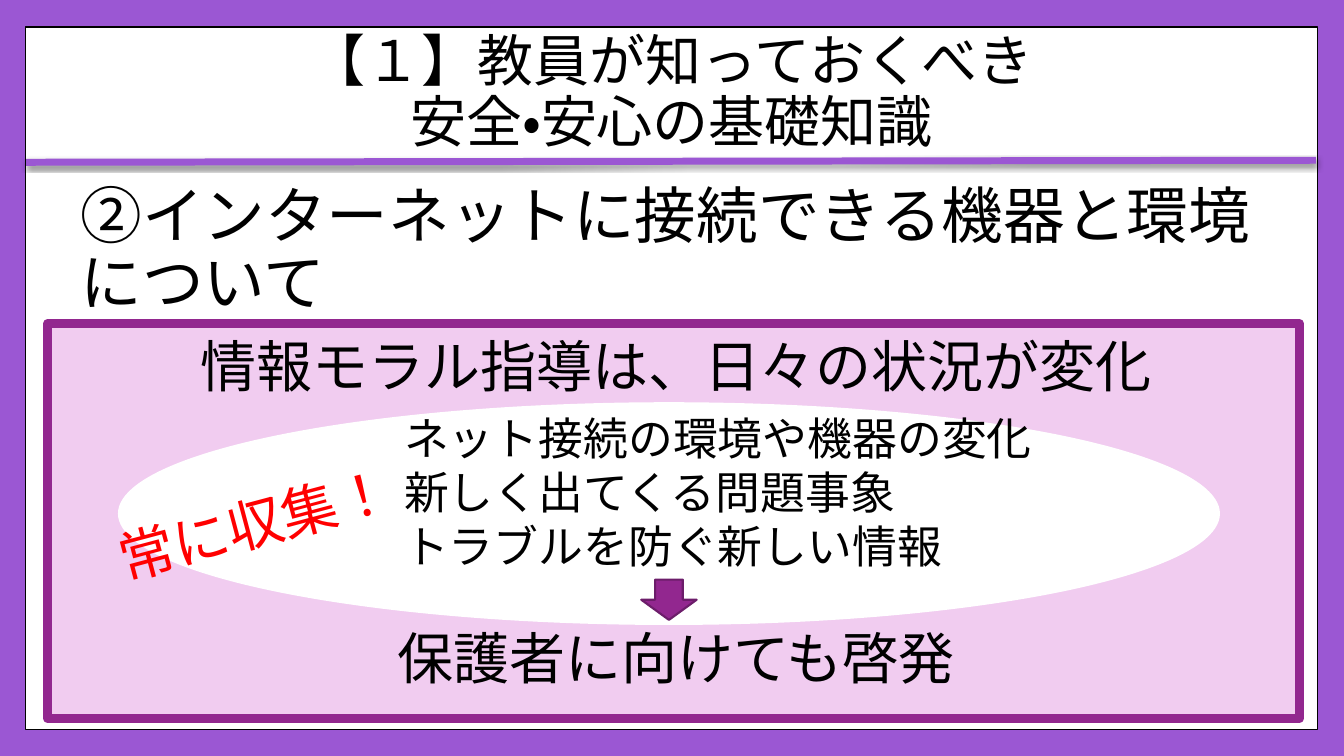
from lxml import etree
from pptx import Presentation
from pptx.dml.color import RGBColor
from pptx.enum.lang import MSO_LANGUAGE_ID
from pptx.enum.shapes import MSO_CONNECTOR, MSO_SHAPE
from pptx.enum.text import MSO_ANCHOR, MSO_AUTO_SIZE, PP_ALIGN
from pptx.oxml.ns import qn
from pptx.util import Inches, Pt

LEFT, CENTER = PP_ALIGN.LEFT, PP_ALIGN.CENTER
TOP, MIDDLE = MSO_ANCHOR.TOP, MSO_ANCHOR.MIDDLE
JAPANESE = MSO_LANGUAGE_ID.JAPANESE

VIOLET = RGBColor(0x9B, 0x57, 0xD3)
PLUM = RGBColor(0x92, 0x27, 0x8F)
DARK_PLUM = RGBColor(0x6C, 0x1D, 0x6A)
PINK = RGBColor(0xF1, 0xCC, 0xF0)
WHITE = RGBColor(0xFF, 0xFF, 0xFF)
BLACK = RGBColor(0, 0, 0)
RED = RGBColor(0xFF, 0, 0)


def write(shape, lines, size=40, font="Arial", color=BLACK, align=LEFT, anchor=TOP,
          spacing=1.0, before=0, gap=None, indent=0, wrap=True):
    """Fill a shape with paragraphs; gap is the space between them."""
    frame = shape.text_frame
    frame.word_wrap = wrap
    frame.auto_size = MSO_AUTO_SIZE.NONE if wrap else MSO_AUTO_SIZE.SHAPE_TO_FIT_TEXT
    frame.vertical_anchor = anchor
    for index, line in enumerate(lines):
        paragraph = frame.add_paragraph() if index else frame.paragraphs[0]
        paragraph.text = line
        paragraph.alignment = align
        paragraph.line_spacing = spacing
        paragraph.space_before = Pt(gap if index and gap is not None else before)
        paragraph._p.get_or_add_pPr().set("marL", str(Inches(indent)))
        for run in paragraph.runs:
            run.font.size = Pt(size)
            run.font.name = font
            run.font.color.rgb = color
            run.font.language_id = JAPANESE


def add_figure(kind, box, fill, line=None, width=0):
    shape = slide.shapes.add_shape(kind, *map(Inches, box))
    shape.shadow.inherit = False
    shape.fill.solid()
    shape.fill.fore_color.rgb = fill
    if line is None:
        shape.line.fill.background()
    else:
        shape.line.color.rgb = line
        shape.line.width = Pt(width)
    return shape


presentation = Presentation()
presentation.slide_width = Inches(13.33)
presentation.slide_height = Inches(7.5)
slide = presentation.slides.add_slide(presentation.slide_layouts[5])
slide.background.fill.solid()
slide.background.fill.fore_color.rgb = VIOLET

# White page and the shadowed rule under the title
add_figure(MSO_SHAPE.RECTANGLE, (0.25, 0.27, 12.82, 6.97), WHITE, BLACK, 1)
rule = slide.shapes.add_connector(
    MSO_CONNECTOR.STRAIGHT, *map(Inches, (0.26, 1.61, 13.05, 1.59)))
rule.line.color.rgb = VIOLET
rule.line.width = Pt(5)
effects = etree.SubElement(rule._element.spPr, qn("a:effectLst"))
shadow = etree.SubElement(effects, qn("a:outerShdw"), blurRad=str(Pt(3)),
                          dist=str(Pt(2)), dir="5400000", rotWithShape="0")
shadow_color = etree.SubElement(shadow, qn("a:srgbClr"), val="000000")
etree.SubElement(shadow_color, qn("a:alpha"), val="45000")

# Title, brought in front of the page
title = slide.shapes.title
title.left, title.top, title.width, title.height = map(Inches, (0.26, 0.36, 12.8, 1.14))
slide.shapes._spTree.append(title._element)
write(title, ["【１】教員が知っておくべき\v安全・安心の基礎知識"], font="Roboto",
      align=CENTER, anchor=MIDDLE, spacing=0.9)

# Topic
topic = slide.shapes.add_textbox(*map(Inches, (0.65, 1.79, 12, 1.4)))
write(topic, ["②インターネットに接続できる機器と環境について"], size=44,
      spacing=0.9, before=14, indent=0.05)

# Panel with its opening and closing statements
panel = add_figure(MSO_SHAPE.RECTANGLE, (0.47, 3.21, 12.42, 3.92), PINK, PLUM, 6)
write(panel, ["情報モラル指導は、日々の状況が変化", "保護者に向けても啓発"],
      align=CENTER, anchor=MIDDLE, spacing=0.6, before=14, gap=180, indent=0.05)

# Oval with the things to keep collecting
add_figure(MSO_SHAPE.OVAL, (1.17, 3.99, 10.93, 2.21), WHITE)
changes = slide.shapes.add_textbox(*map(Inches, (3.91, 4.03, 6.48, 1.89)))
write(changes, ["ネット接続の環境や機器の変化", "新しく出てくる問題事象", "トラブルを防ぐ新しい情報"],
      size=32, wrap=False)
callout = slide.shapes.add_textbox(*map(Inches, (1.04, 4.8, 3.01, 0.77)))
callout.rotation = 345
write(callout, ["常に収集！"], color=RED, wrap=False)

# Arrow to the closing statement
add_figure(MSO_SHAPE.DOWN_ARROW, (6.36, 5.75, 0.55, 0.4), PLUM, DARK_PLUM, 1.5)

presentation.save("out.pptx")
